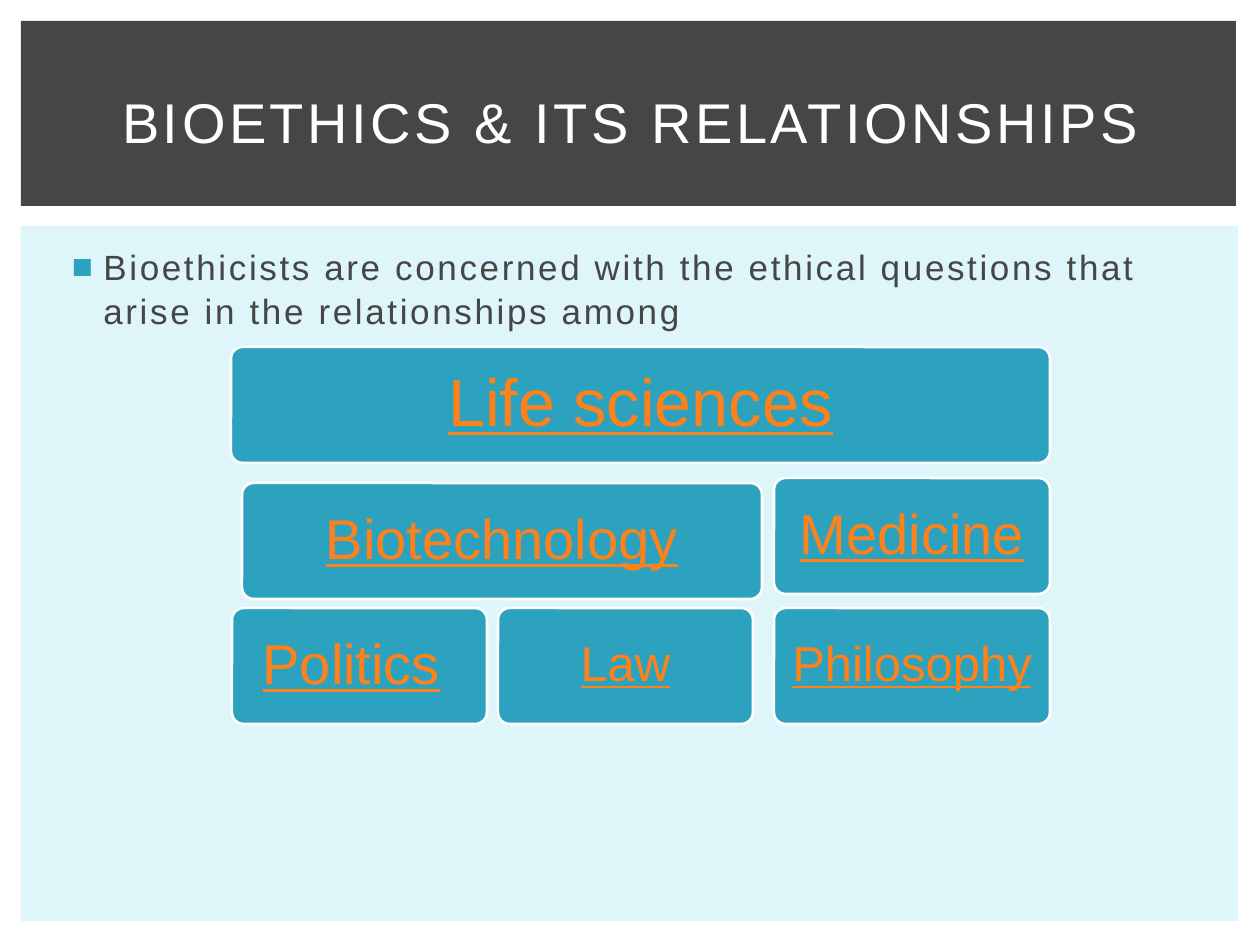
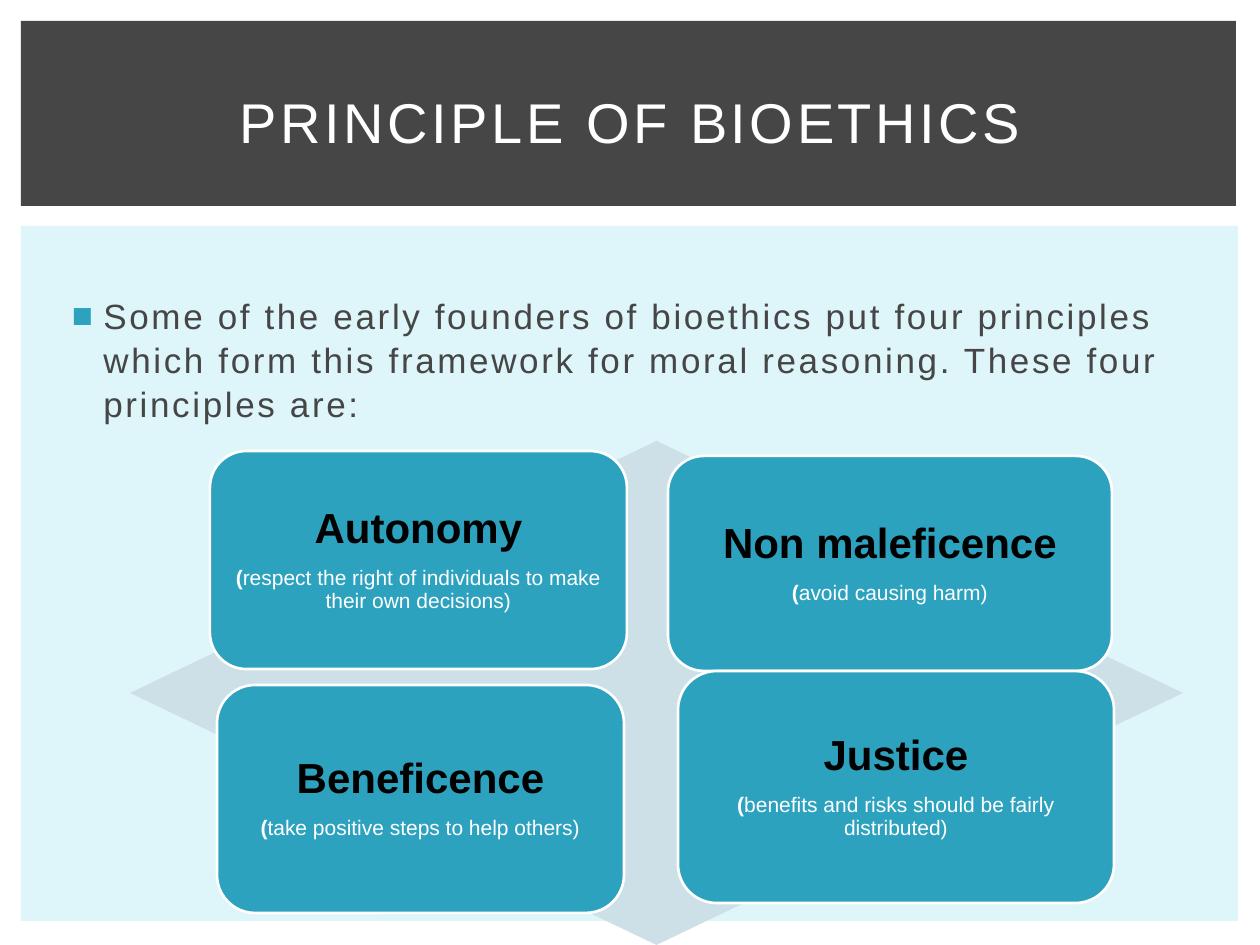
import lxml.etree
import pptx
import pptx.dml.color
import pptx.enum.shapes
import pptx.enum.text
import pptx.oxml.ns
import pptx.util

# Shared style
PX = 914400 / 126
FONT = "Arial"
COLORS = {
    "panel": "DEF5FA", "band": "464646", "text": "464646", "white": "FFFFFF",
    "teal": "2DA2BF", "orange": "FF8119", "black": "000000", "diamond": "CDE0E8",
}
SHAPE = pptx.enum.shapes.MSO_SHAPE
CENTER = pptx.enum.text.PP_ALIGN.CENTER
MIDDLE = pptx.enum.text.MSO_ANCHOR.MIDDLE
TITLE_BOX = (53, 49, 1155, 145)
BACKDROP = [("panel", (21, 226, 1217, 695)), ("band", (21, 21, 1215, 185))]
PAD = 12

# Slide 1: text, size, box, extra right padding
RELATIONSHIPS = {
    "title": "BIOETHICS & ITS RELATIONSHIPS",
    "body": "Bioethicists are concerned with the ethical questions that "
            "arise in the relationships among",
    "body_box": (53, 237, 1158, 687),
}
FIELDS = [
    ("Life sciences", 38, (231, 347, 819, 116), 0),
    ("Biotechnology", 32, (242, 483, 520, 116), 0),
    ("Politics", 32, (232, 608, 255, 116), 16),
    ("Law", 28, (498, 608, 255, 116), 0),
    ("Medicine", 32, (774, 478, 276, 116), 0),
    ("Philosophy", 28, (774, 608, 276, 116), 0),
]

# Slide 2: principle, meaning, box
PRINCIPLES = {
    "title": "PRINCIPLE OF BIOETHICS",
    "body": "Some of the early founders of bioethics put four principles which "
            "form this framework for moral reasoning. These four principles are:",
    "body_box": (53, 286, 1158, 558),
}
DIAMOND_BOX = (130, 441, 1053, 504)
CARDS = [
    ("Autonomy", "respect the right of individuals to make their own decisions)",
     (210, 451, 417, 218)),
    ("Non maleficence", "avoid causing harm)", (668, 456, 444, 215)),
    ("Beneficence", "take positive steps to help others)", (217, 685, 407, 228)),
    ("Justice", "benefits and risks should be fairly distributed)",
     (678, 671, 436, 232)),
]


def rgb(name):
    return pptx.dml.color.RGBColor.from_string(COLORS[name])


def emu(box):
    return [round(v * PX) for v in box]


def style(r, size, color, spacing=0, bold=False, underline=False):
    f = r.font
    f.name, f.size, f.bold, f.underline = FONT, pptx.util.Pt(size), bold, underline
    f.color.rgb = rgb(color)
    if spacing:
        r._r.get_or_add_rPr().set("spc", str(round(spacing * 100)))


def add_shape(s, kind, box, fill, outlined=False):
    sp = s.shapes.add_shape(kind, *emu(box))
    sp.shadow.inherit = False
    sp.fill.solid()
    sp.fill.fore_color.rgb = rgb(fill)
    if outlined:
        sp.line.color.rgb = rgb("white")
        sp.line.width = pptx.util.Pt(1.5)
    else:
        sp.line.fill.background()
    return sp


def add_card(s, box, lines, extra_right=0):
    sp = add_shape(s, SHAPE.ROUNDED_RECTANGLE, box, "teal", outlined=True)
    tf = sp.text_frame
    tf.word_wrap = True
    tf.vertical_anchor = MIDDLE
    tf.margin_left, tf.margin_right, tf.margin_top, tf.margin_bottom = emu(
        (PAD, PAD + extra_right, PAD, PAD))
    tf.text = "\n".join(lines)
    for p in tf.paragraphs:
        p.alignment = CENTER
        p.line_spacing = 0.9
    return sp


def place(sp, box, text):
    sp.left, sp.top, sp.width, sp.height = emu(box)
    tf = sp.text_frame
    tf.text = text
    tf.word_wrap = True
    tf.auto_size = pptx.enum.text.MSO_AUTO_SIZE.NONE
    return tf, tf.paragraphs[0]


def add_bullet(p):
    pPr = p._p.get_or_add_pPr()
    pPr.set("marL", str(pptx.util.Inches(0.3)))
    pPr.set("indent", str(pptx.util.Inches(-0.25)))
    qn = pptx.oxml.ns.qn
    clr = lxml.etree.SubElement(pPr, qn("a:buClr"))
    lxml.etree.SubElement(clr, qn("a:srgbClr"), val=COLORS["teal"])
    lxml.etree.SubElement(pPr, qn("a:buFont"), typeface=FONT)
    lxml.etree.SubElement(pPr, qn("a:buChar"), char="■")


def add_slide(prs, content):
    s = prs.slides.add_slide(prs.slide_layouts[1])
    tf, p = place(s.shapes.title, TITLE_BOX, content["title"])
    tf.vertical_anchor = MIDDLE
    p.alignment = CENTER
    style(p.runs[0], 32, "white", spacing=2)

    tf, p = place(s.placeholders[1], content["body_box"], content["body"])
    add_bullet(p)
    p.space_before = pptx.util.Pt(0)
    p.line_spacing = 1.05
    style(p.runs[0], 20, "text", spacing=1.5)
    return s


def add_backdrop(s):
    """Build the bands once and move them to the shared layout."""
    tree = s.slide_layout.shapes.element
    for i, (fill, box) in enumerate(BACKDROP):
        tree.insert(2 + i, add_shape(s, SHAPE.RECTANGLE, box, fill).element)


def main():
    prs = pptx.Presentation()
    prs.slide_width, prs.slide_height = emu((1260, 945))

    # Related fields
    s = add_slide(prs, RELATIONSHIPS)
    add_backdrop(s)
    for name, size, box, extra in FIELDS:
        sp = add_card(s, box, [name], extra)
        sp.adjustments[0] = 0.1
        style(sp.text_frame.paragraphs[0].runs[0], size, "orange", underline=True)

    # Four principles over the diamond
    s = add_slide(prs, PRINCIPLES)
    add_shape(s, SHAPE.DIAMOND, DIAMOND_BOX, "diamond")
    for name, meaning, box in CARDS:
        head, sub = add_card(s, box, [name, "("]).text_frame.paragraphs
        head.space_after = pptx.util.Pt(8.4)
        style(head.runs[0], 24, "black", bold=True)
        style(sub.runs[0], 12, "white", bold=True)
        r = sub.add_run()
        r.text = meaning
        style(r, 12, "white")

    prs.save("out.pptx")


if __name__ == "__main__":
    main()
